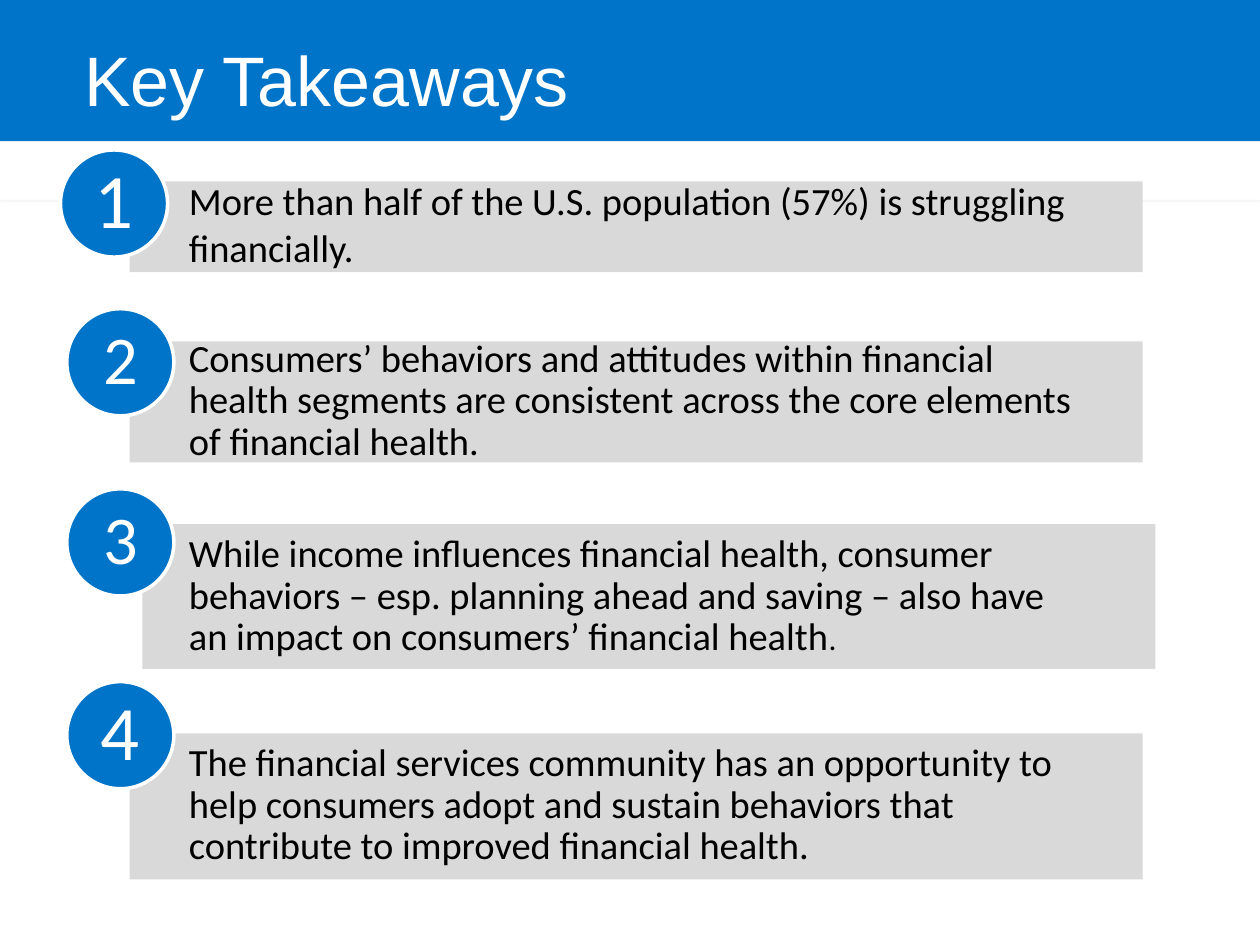
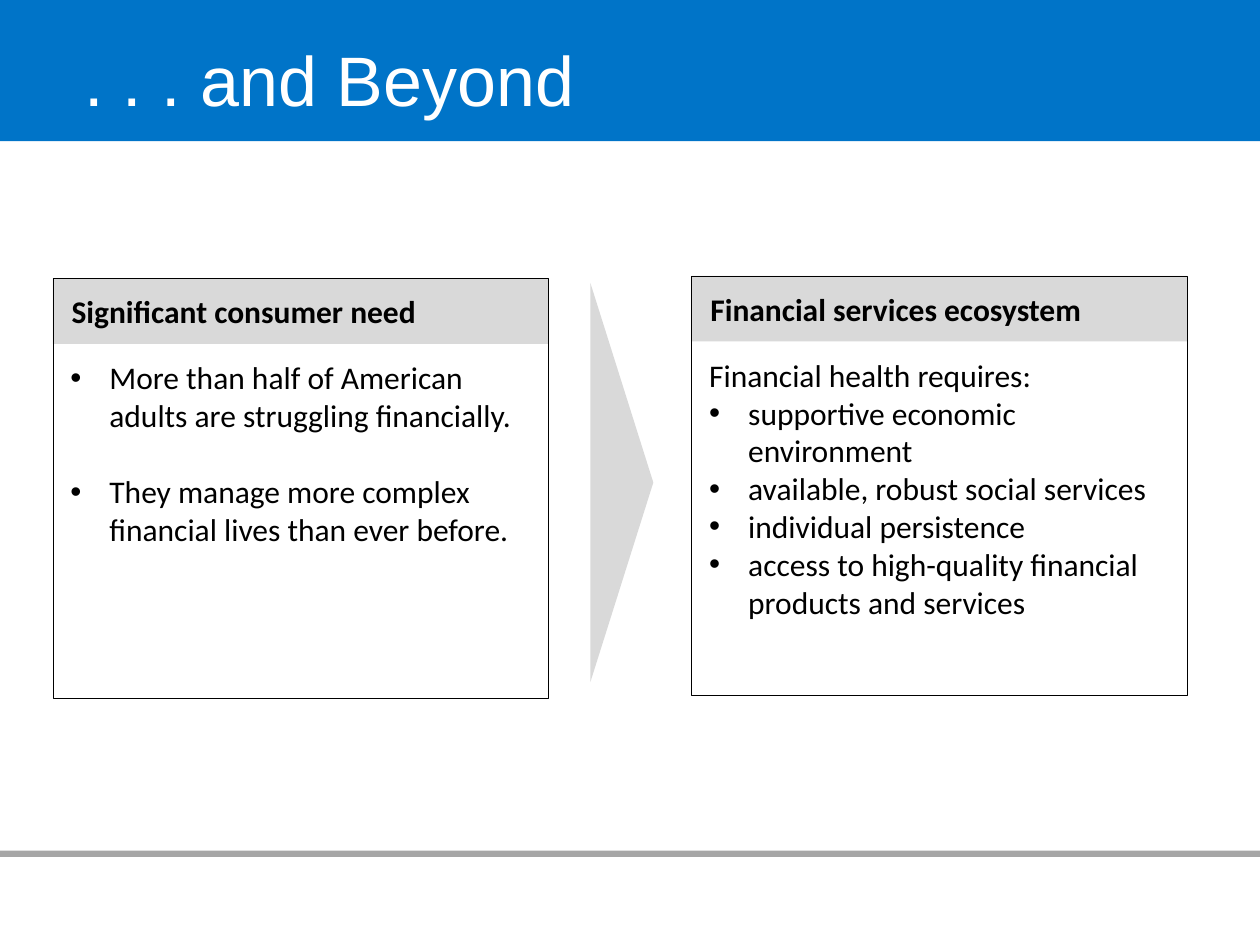
from dataclasses import dataclass

from lxml.etree import SubElement
from pptx import Presentation
from pptx.dml.color import RGBColor
from pptx.enum.shapes import MSO_SHAPE as SHAPE
from pptx.enum.text import MSO_ANCHOR as ANCHOR, PP_ALIGN as ALIGN
from pptx.oxml.ns import qn
from pptx.util import Inches, Pt

COLS, ROWS = 100, 75


@dataclass(frozen=True)
class Theme:
    """Colours, fonts and type sizes shared by the slides."""
    blue: str = "0074C8"
    grey: str = "D9D9D9"
    rule: str = "A6A6A6"
    white: str = "FFFFFF"
    black: str = "000000"
    title_font: str = "Arial"
    body_font: str = "Calibri"
    title: int = 40
    takeaway: int = 22
    card: int = 18


@dataclass(frozen=True)
class Takeaway:
    """A numbered statement and its place on the grid."""
    text: str
    circle: tuple
    bar: tuple
    text_top: float
    digit_size: int = 44
    spacing: float = 0.9
    end: str = ""


THEME = Theme()

TAKEAWAYS = [
    Takeaway("More than half of the U.S. population (57%) is struggling financially.",
             (4.8, 11.9), (10.3, 14.4, 7.2), 13, spacing=1.0),
    Takeaway("Consumers’ behaviors and attitudes within financial health segments "
             "are consistent across the core elements of financial health.",
             (5.3, 24.5), (10.3, 27.1, 9.6), 27.1, digit_size=39),
    Takeaway("While income influences financial health, consumer behaviors – esp. "
             "planning ahead and saving – also have an impact on consumers’ "
             "financial health",
             (5.3, 38.8), (11.3, 41.6, 11.5), 42.6, digit_size=39, end="."),
    Takeaway("The financial services community has an opportunity to help consumers "
             "adopt and sustain behaviors that contribute to improved financial health.",
             (5.3, 54.1), (10.3, 58.2, 11.6), 59.2),
]

NEEDS = ["More than half of American adults are struggling financially.",
         "They manage more complex financial lives than ever before."]
REQUIREMENTS = ["supportive economic environment",
                "available, robust social services",
                "individual persistence",
                "access to high-quality financial products and services"]


def cell(n):
    """Length of n grid cells."""
    return Inches(n / 10)


def rgb(color):
    """Colour object of a hex string."""
    return RGBColor.from_string(color)


def add_shape(slide, kind, x, y, w, h, fill=None, line=None, width=1):
    """Add a preset shape without shadow."""
    sp = slide.shapes.add_shape(kind, cell(x), cell(y), cell(w), cell(h))
    sp.shadow.inherit = False
    if fill:
        sp.fill.solid()
        sp.fill.fore_color.rgb = rgb(fill)
    else:
        sp.fill.background()
    if line:
        sp.line.color.rgb = rgb(line)
        sp.line.width = Pt(width)
    else:
        sp.line.fill.background()
    return sp


def add_box(slide, x, y, w, h, anchor=ANCHOR.MIDDLE, insets=(1, 0.5, 1, 0.5)):
    """Add a wrapping text box and return its text frame."""
    tf = slide.shapes.add_textbox(cell(x), cell(y), cell(w), cell(h)).text_frame
    tf.word_wrap = True
    tf.vertical_anchor = anchor
    (tf.margin_left, tf.margin_top,
     tf.margin_right, tf.margin_bottom) = map(cell, insets)
    return tf


def next_para(tf):
    """Return the first paragraph if unused, else a new one."""
    p = tf.paragraphs[0]
    return tf.add_paragraph() if p.runs else p


def add_text(p, text, *, size, color=THEME.black, font=THEME.body_font, bold=False,
             align=ALIGN.LEFT, spacing=1.0, before=0, indent=0, bullet=False):
    """Add a formatted run to a paragraph and set the paragraph's layout."""
    p.alignment = align
    p.line_spacing = spacing
    if before:
        p.space_before = Pt(before)
    pPr = p._p.get_or_add_pPr()
    if indent:
        pPr.set("marL", str(cell(indent)))
        pPr.set("indent", str(-cell(indent) if bullet else 0))
    if bullet:
        SubElement(pPr, qn("a:buFont"), typeface=THEME.title_font)
        SubElement(pPr, qn("a:buChar"), char="•")
    r = p.add_run()
    r.text = text
    r.font.size = Pt(size)
    r.font.name = font
    r.font.bold = bold
    r.font.color.rgb = rgb(color)


def add_shadow(sp, color, alpha, blur, dist):
    """Give a shape a soft shadow that falls downwards."""
    effects = sp._element.spPr.find(qn("a:effectLst"))
    shadow = SubElement(effects, qn("a:outerShdw"), blurRad=str(Pt(blur)),
                        dist=str(Pt(dist)), dir="5400000", rotWithShape="0")
    clr = SubElement(shadow, qn("a:srgbClr"), val=color)
    SubElement(clr, qn("a:alpha"), val=str(alpha * 1000))


def add_slide(prs, title):
    """Add a slide with the blue title band."""
    slide = prs.slides.add_slide(prs.slide_layouts[6])
    add_shape(slide, SHAPE.RECTANGLE, 0, 0, COLS, 11.2, THEME.blue)
    tf = add_box(slide, 5.7, 0, 90, 12.5)
    add_text(next_para(tf), title, size=THEME.title, color=THEME.white,
             font=THEME.title_font)
    return slide


def add_takeaway(slide, number, item):
    """Add a grey bar, its statement and a numbered circle."""
    x, y, h = item.bar
    add_shape(slide, SHAPE.RECTANGLE, x, y, 80.4, h, THEME.grey)
    tf = add_box(slide, 15, item.text_top, 73, 9.5, insets=(0, 1.4, 1.4, 1.4))
    p = next_para(tf)
    add_text(p, item.text, size=THEME.takeaway, spacing=item.spacing)
    if item.end:
        add_text(p, item.end, size=THEME.card, spacing=item.spacing)
    cx, cy = item.circle
    add_shape(slide, SHAPE.OVAL, cx, cy, 8.5, 8.5, THEME.blue, THEME.white, 2)
    tf = add_box(slide, cx + 1.25, cy + 1.25, 6, 6, insets=(0, 0, 0, 0))
    add_text(next_para(tf), str(number), size=item.digit_size, color=THEME.white,
             align=ALIGN.CENTER, spacing=0.9)


def add_card(slide, x, y, heading, bullets, intro=None, gap=0):
    """Add a framed card with a grey heading and bullets."""
    tf = add_box(slide, x + 0.4, y + 5.85, 38.1, 22.2, ANCHOR.TOP)
    if intro:
        add_text(next_para(tf), intro, size=THEME.card)
    for i, text in enumerate(bullets):
        add_text(next_para(tf), text, size=THEME.card, indent=3.1, bullet=True,
                 before=gap if i else 0)
    header = add_shape(slide, SHAPE.RECTANGLE, x, y, 39.3, 5.2, THEME.grey)
    header.text_frame.word_wrap = True
    header.text_frame.vertical_anchor = ANCHOR.MIDDLE
    add_text(next_para(header.text_frame), heading, size=THEME.card, bold=True,
             indent=0.5)
    add_shape(slide, SHAPE.RECTANGLE, x, y, 39.3, 33.3, line=THEME.black, width=0.25)


def build_takeaways(prs):
    """Build the slide of numbered takeaways."""
    slide = add_slide(prs, "Key Takeaways")
    panel = add_shape(slide, SHAPE.RECTANGLE, 0, 16, COLS, ROWS - 16, THEME.white)
    add_shadow(panel, THEME.black, alpha=35, blur=3.1, dist=1.8)
    for number, item in enumerate(TAKEAWAYS, 1):
        add_takeaway(slide, number, item)


def build_beyond(prs):
    """Build the slide that leads from need to ecosystem."""
    slide = add_slide(prs, ". . . and Beyond")
    add_shape(slide, SHAPE.RECTANGLE, 0, 67.5, COLS, 0.5, THEME.rule)
    add_card(slide, 4.2, 22.1, "Significant consumer need", NEEDS, gap=22)
    arrow = add_shape(slide, SHAPE.ISOSCELES_TRIANGLE, 33.5, 35.8, 31.7, 5, THEME.grey)
    arrow.rotation = 90
    add_card(slide, 54.9, 21.9, "Financial services ecosystem", REQUIREMENTS,
             intro="Financial health requires:")


def main():
    """Build and save the presentation."""
    prs = Presentation()
    prs.slide_width, prs.slide_height = cell(COLS), cell(ROWS)
    build_takeaways(prs)
    build_beyond(prs)
    prs.save("out.pptx")


if __name__ == "__main__":
    main()
